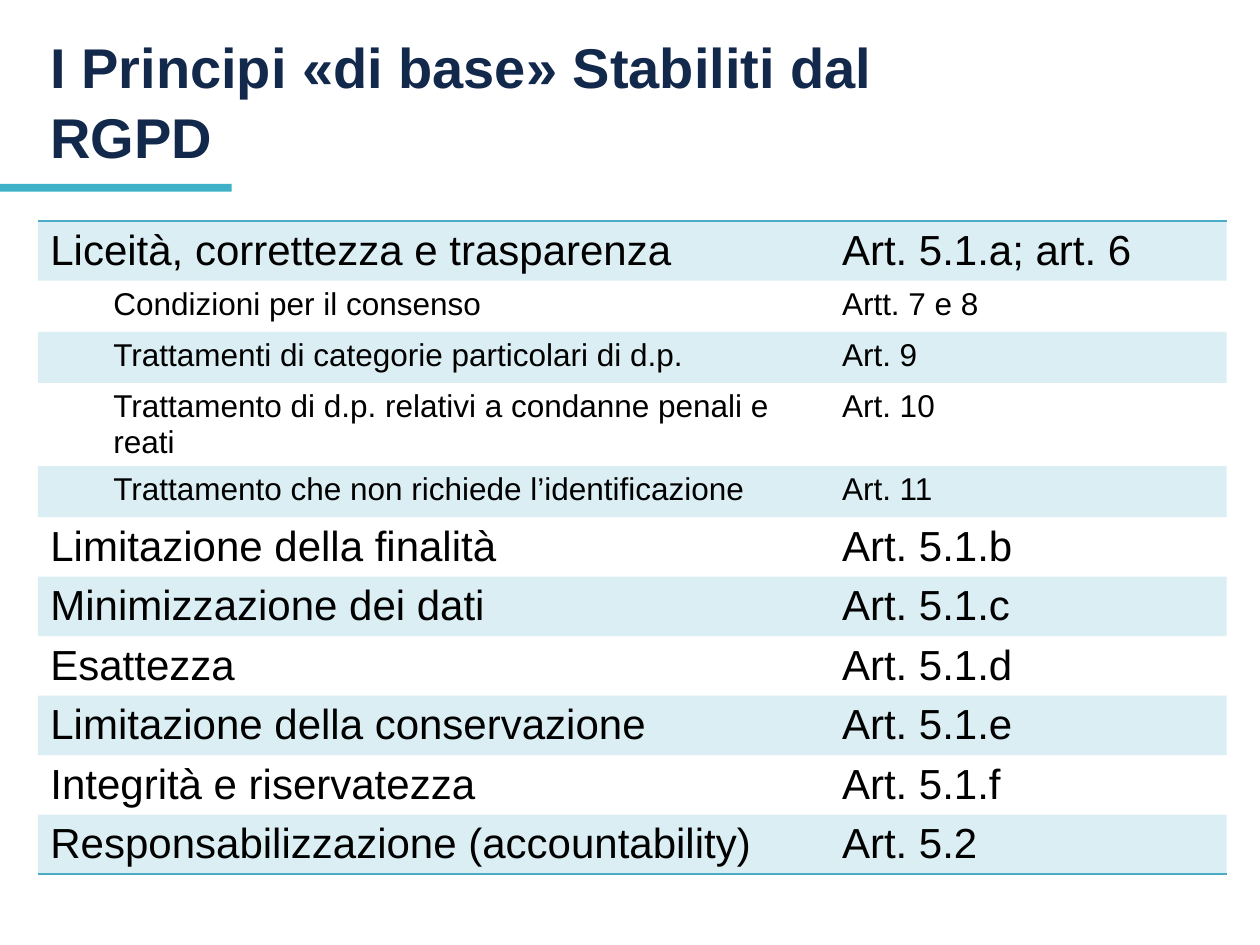
from lxml.etree import SubElement
from pptx import Presentation
from pptx.dml.color import RGBColor
from pptx.enum.shapes import MSO_SHAPE
from pptx.enum.text import MSO_ANCHOR, MSO_AUTO_SIZE, PP_ALIGN
from pptx.oxml import parse_xml
from pptx.oxml.ns import nsdecls, qn
from pptx.util import Pt

TITLE = "I Principi «di base» Stabiliti dal RGPD"
# (level, principle, articles)
PRINCIPLES = [
    (0, "Liceità, correttezza e trasparenza", "Art. 5.1.a; art. 6"),
    (1, "Condizioni per il consenso", "Artt. 7 e 8"),
    (1, "Trattamenti di categorie particolari di d.p.", "Art. 9"),
    (1, "Trattamento di d.p. relativi a condanne penali e reati", "Art. 10"),
    (1, "Trattamento che non richiede l’identificazione", "Art. 11"),
    (0, "Limitazione della finalità", "Art. 5.1.b"),
    (0, "Minimizzazione dei dati", "Art. 5.1.c"),
    (0, "Esattezza", "Art. 5.1.d"),
    (0, "Limitazione della conservazione", "Art. 5.1.e"),
    (0, "Integrità e riservatezza", "Art. 5.1.f"),
    (0, "Responsabilizzazione (accountability)", "Art. 5.2"),
]
THEME = {
    "font": "Arial",
    "navy": "13294B", "teal": "3EB1C8", "band": "4BACC6", "black": "000000",
    "title_size": 32, "level_sizes": (24, 18),
}
NO_STYLE_NO_GRID = "{2D5ABB26-0587-4C30-8999-92F81FD0307C}"
LEFT = 21.6
TABLE_TOP = 126.4
COLUMN_WIDTHS = (452.4, 227)
ROW_HEIGHT = 29.2
INDENT = 36


def write(frame, text, *, size, color, bold=False, level=0, indent=0, spacing=None):
    paragraph = frame.paragraphs[0]
    paragraph.text = text
    paragraph.alignment = PP_ALIGN.LEFT
    paragraph.level = level
    paragraph.line_spacing = spacing
    if indent:
        properties = paragraph._p.get_or_add_pPr()
        properties.set("marL", str(Pt(indent)))
        properties.set("indent", "0")
    font = paragraph.runs[0].font
    font.name = THEME["font"]
    font.size = Pt(size)
    font.bold = bold
    font.color.rgb = RGBColor.from_string(color)


def shade(cell, banded):
    """Give a banded cell a 20 % tint, and any other cell no fill."""
    if not banded:
        cell.fill.background()
        return
    cell.fill.solid()
    cell.fill.fore_color.rgb = RGBColor.from_string(THEME["band"])
    tint = cell._tc.tcPr.find(qn("a:solidFill"))[0]
    SubElement(tint, qn("a:alpha"), val="20000")


def rule(cell, side):
    """Draw a 1 pt border on one side; side is lnT or lnB."""
    border = parse_xml(
        f'<a:{side} {nsdecls("a")} w="{Pt(1)}"><a:solidFill>'
        f'<a:srgbClr val="{THEME["band"]}"/></a:solidFill></a:{side}>'
    )
    cell._tc.get_or_add_tcPr().insert(0, border)


def add_heading(slide):
    accent = slide.shapes.add_shape(
        MSO_SHAPE.RECTANGLE, 0, Pt(105.1), Pt(132.4), Pt(4.4))
    accent.shadow.inherit = False
    accent.fill.solid()
    accent.fill.fore_color.rgb = RGBColor.from_string(THEME["teal"])
    accent.line.fill.background()

    title = slide.shapes.title
    title.left, title.top, title.width, title.height = (
        Pt(LEFT), Pt(23), Pt(584.6), Pt(77.8))
    frame = title.text_frame
    frame.word_wrap = True
    frame.auto_size = MSO_AUTO_SIZE.NONE
    frame.vertical_anchor = MSO_ANCHOR.BOTTOM
    write(frame, TITLE, size=THEME["title_size"], color=THEME["navy"],
          bold=True, spacing=1.04)


def add_principles(slide):
    count = len(PRINCIPLES)
    table = slide.shapes.add_table(
        count, len(COLUMN_WIDTHS), Pt(LEFT), Pt(TABLE_TOP),
        Pt(sum(COLUMN_WIDTHS)), Pt(ROW_HEIGHT * count)).table
    table.first_row = False
    table._tbl.tblPr.find(qn("a:tableStyleId")).text = NO_STYLE_NO_GRID
    for column, width in zip(table.columns, COLUMN_WIDTHS):
        column.width = Pt(width)
    for row, (level, principle, articles) in enumerate(PRINCIPLES):
        table.rows[row].height = Pt(ROW_HEIGHT)
        for column, text in enumerate((principle, articles)):
            cell = table.cell(row, column)
            cell_level = level if column == 0 else 0
            write(cell.text_frame, text, size=THEME["level_sizes"][level],
                  color=THEME["black"], level=cell_level,
                  indent=INDENT * cell_level)
            shade(cell, banded=row % 2 == 0)
            if row == 0:
                rule(cell, "lnT")
            if row == count - 1:
                rule(cell, "lnB")


def main():
    deck = Presentation()
    deck.slide_width, deck.slide_height = Pt(720), Pt(540)
    slide = deck.slides.add_slide(deck.slide_layouts[5])
    add_heading(slide)
    add_principles(slide)
    deck.save("out.pptx")


if __name__ == "__main__":
    main()
